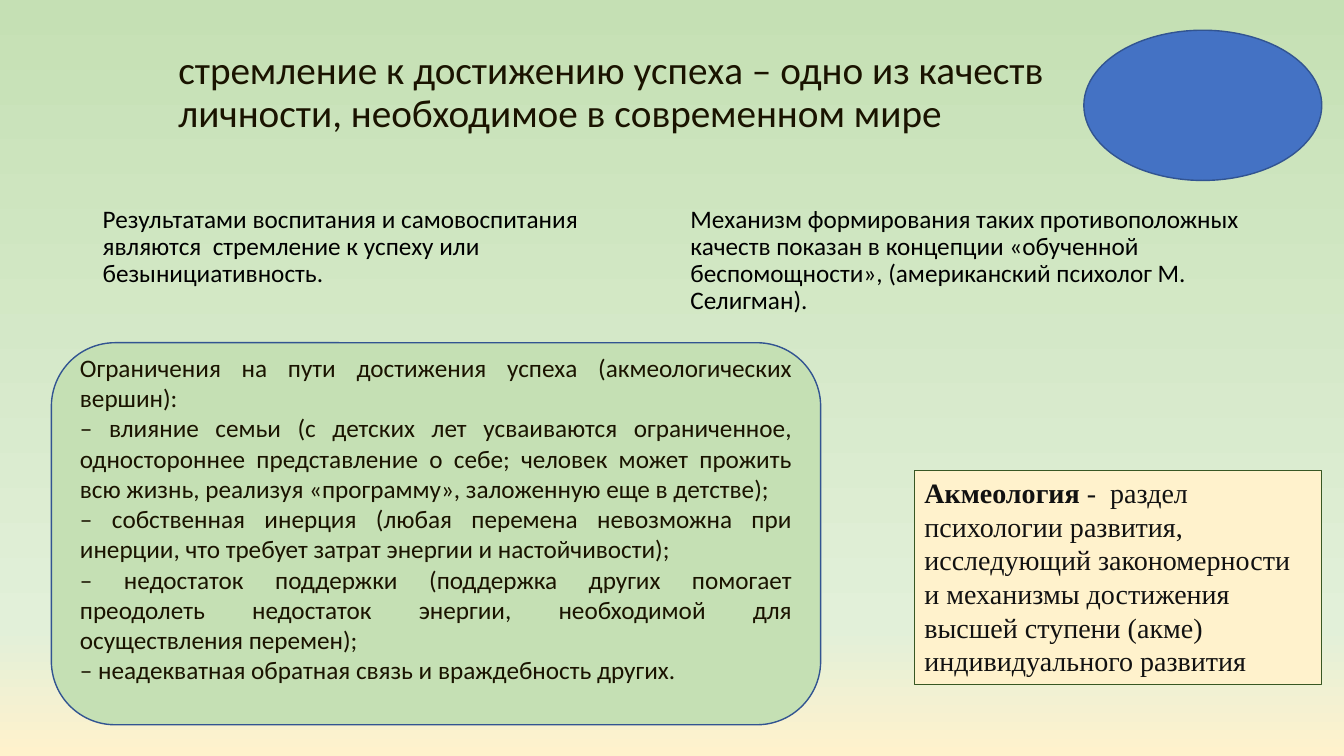
from dataclasses import dataclass

from lxml.etree import SubElement
from pptx import Presentation
from pptx.dml.color import RGBColor
from pptx.enum.shapes import MSO_SHAPE
from pptx.enum.text import MSO_ANCHOR, PP_ALIGN
from pptx.oxml.ns import qn
from pptx.util import Inches, Pt


@dataclass(frozen=True)
class Theme:
    """Colours, fonts and type sizes."""
    green: str = "C5E0B4"
    mint: str = "E2F0D9"
    cream: str = "FFF2CC"
    blue: str = "4472C4"
    navy: str = "325491"
    olive: str = "385723"
    black: str = "000000"
    ink: str = "1A1300"
    coal: str = "111111"
    sans: str = "Calibri"
    serif: str = "Times New Roman"
    title: int = 28
    term: int = 20
    body: int = 18


class Deck:
    """Draws styled elements on the current slide."""

    def __init__(self, theme):
        self.theme = theme
        self.show = Presentation()
        self.show.slide_width = Inches(13.33)
        self.show.slide_height = Inches(7.5)
        self.slide = self.show.slides.add_slide(self.show.slide_layouts[6])

    def back(self, stops):
        """Fill the background with a vertical gradient."""
        fill = self.slide.background.fill
        fill.gradient()
        fill.gradient_angle = 270
        tree = self.slide.element.find(".//" + qn("a:gsLst"))
        for old in list(tree):
            tree.remove(old)
        for place, color in stops:
            stop = SubElement(tree, qn("a:gs"), pos=str(place * 1000))
            SubElement(stop, qn("a:srgbClr"), val=color)

    def text(self, shape, paras, size, color, font, align=PP_ALIGN.LEFT,
             anchor=MSO_ANCHOR.TOP, space=1.0, before=0):
        """Fill a shape with paragraphs of (words, bold) runs."""
        frame = shape.text_frame
        frame.word_wrap = True
        frame.vertical_anchor = anchor
        for i, runs in enumerate(paras):
            para = frame.add_paragraph() if i else frame.paragraphs[0]
            para.alignment = align
            para.line_spacing = space
            para.space_before = Pt(before)
            for words, bold in runs:
                run = para.add_run()
                run.text = words
                run.font.name = font
                run.font.size = Pt(size)
                run.font.bold = bold
                run.font.color.rgb = RGBColor.from_string(color)

    def label(self, spot, words, size, color, **style):
        """Add a plain text box."""
        box = self.slide.shapes.add_textbox(*map(Inches, spot))
        self.text(box, [[(words, False)]], size, color, self.theme.sans,
                  space=0.9, **style)

    def shape(self, kind, spot, fill, line, width=1):
        """Add a filled and outlined shape."""
        item = self.slide.shapes.add_shape(kind, *map(Inches, spot))
        item.shadow.inherit = False
        item.fill.solid()
        item.fill.fore_color.rgb = RGBColor.from_string(fill)
        item.line.color.rgb = RGBColor.from_string(line)
        item.line.width = Pt(width)
        return item


def main():
    """Build the slide."""
    look = Theme()
    deck = Deck(look)
    deck.back([(0, look.green), (83, look.mint), (100, look.cream)])

    deck.label((1.67, 0.3, 9.88, 1.25),
               "стремление к достижению успеха – одно из качеств личности, "
               "необходимое в современном мире",
               look.title, look.ink, anchor=MSO_ANCHOR.MIDDLE)

    claims = [
        "Результатами воспитания и самовоспитания являются  стремление к "
        "успеху или безынициативность.",
        "Механизм формирования таких противоположных качеств показан в "
        "концепции «обученной беспомощности», (американский психолог "
        "М. Селигман).",
    ]
    for left, claim in zip((0.92, 6.75), claims):
        deck.label((left, 2, 5.67, 4.76), claim, look.body, look.black,
                   before=10)

    limits = [
        "Ограничения на пути достижения успеха (акмеологических вершин):",
        "– влияние семьи (с детских лет усваиваются ограниченное, "
        "одностороннее представление о себе; человек может прожить всю "
        "жизнь, реализуя «программу», заложенную еще в детстве);",
        "– собственная инерция (любая перемена невозможна при инерции, что "
        "требует затрат энергии и настойчивости);",
        "– недостаток поддержки (поддержка других помогает преодолеть "
        "недостаток энергии, необходимой для осуществления перемен);",
        "– неадекватная обратная связь и враждебность других.",
    ]
    panel = deck.shape(MSO_SHAPE.ROUNDED_RECTANGLE, (0.51, 3.4, 7.63, 3.79),
                       look.green, look.navy)
    panel.text_frame.margin_bottom = Inches(0.35)
    deck.text(panel, [[(limit, False)] for limit in limits], look.body,
              look.ink, look.sans, PP_ALIGN.JUSTIFY, MSO_ANCHOR.MIDDLE)

    deck.shape(MSO_SHAPE.OVAL, (10.75, 0.3, 2.36, 1.49), look.blue, look.navy)

    note = deck.shape(MSO_SHAPE.RECTANGLE, (9.07, 4.67, 4.04, 2.12),
                      look.cream, look.olive, 0.75)
    deck.text(note, [[
        ("Акмеология", True),
        (" -  раздел психологии развития, исследующий закономерности и "
         "механизмы достижения высшей ступени (акме) индивидуального "
         "развития", False),
    ]], look.term, look.coal, look.serif)

    deck.show.save("out.pptx")


if __name__ == "__main__":
    main()
